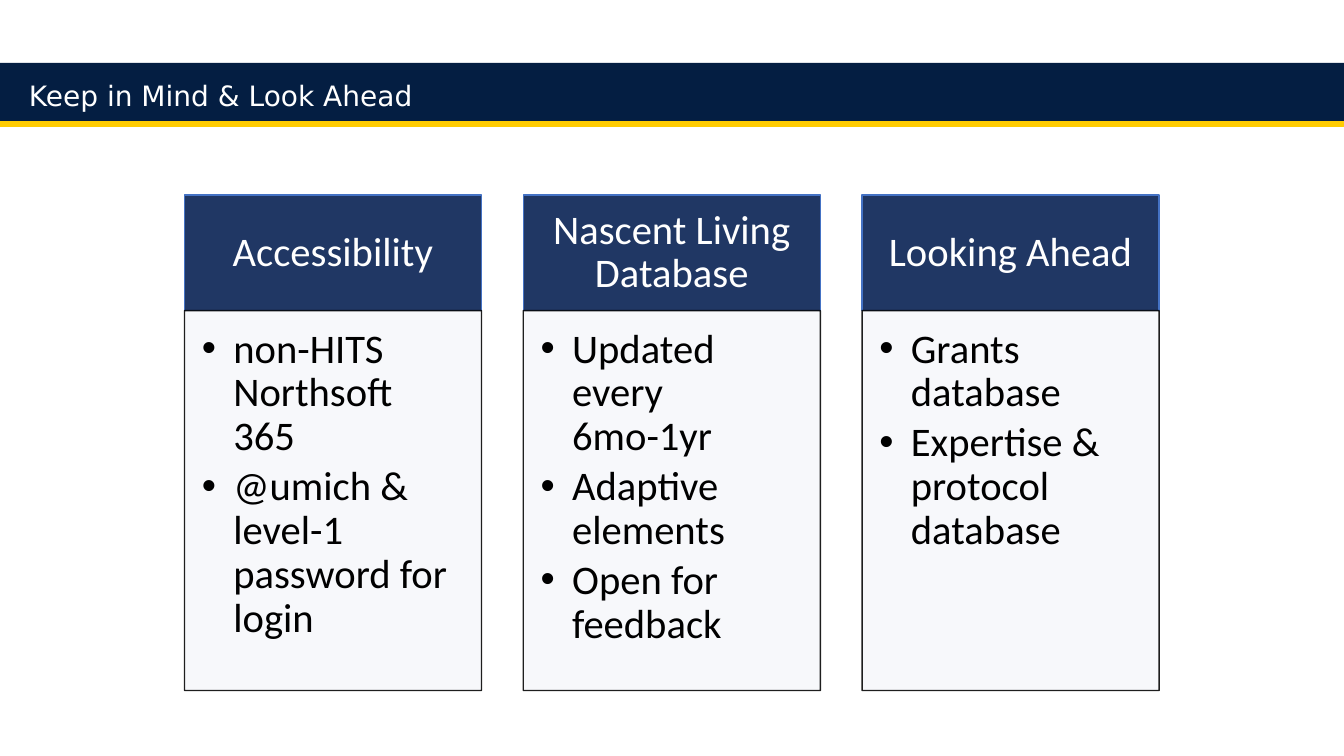
from lxml.etree import SubElement
from pptx import Presentation
from pptx.dml.color import RGBColor
from pptx.enum.shapes import MSO_SHAPE
from pptx.enum.text import MSO_ANCHOR, PP_ALIGN
from pptx.oxml.ns import qn
from pptx.util import Pt

COLORS = {
    "navy": "041E42",
    "maize": "FFCC02",
    "header": "203764",
    "header_edge": "4472C4",
    "card": "CFD5EA",
    "black": "000000",
    "white": "FFFFFF",
}

COLUMNS = [
    ("Accessibility",
     ["non-HITS Northsoft 365", "@umich & level-1 password for login"]),
    ("Nascent Living Database",
     ["Updated every 6mo-1yr", "Adaptive elements", "Open for feedback"]),
    ("Looking Ahead",
     ["Grants database", "Expertise & protocol database"]),
]

LEFT, PITCH, WIDTH = 131.8, 242, 212.2
HEADER_TOP, HEADER_HEIGHT, BODY_HEIGHT = 139.4, 82.5, 271.4
BODY_TOP = HEADER_TOP + HEADER_HEIGHT


class SlideBuilder:
    def __init__(self, page):
        self.page = page
        self.title_style = {"name": "DejaVu Sans", "size": Pt(20)}
        self.column_style = {"name": "Calibri", "size": Pt(29)}

    def paint(self, fill, color, opacity):
        """Make a fill solid, with opacity in percent."""
        fill.solid()
        fill.fore_color.rgb = RGBColor.from_string(COLORS[color])
        if opacity < 100:
            tint = fill._xPr.find(qn("a:solidFill"))[0]
            SubElement(tint, qn("a:alpha"), val=str(opacity * 1000))

    def rectangle(self, left, top, width, height, color, opacity=100,
                  edge=None, edge_width=1, edge_opacity=100):
        box = self.page.shapes.add_shape(
            MSO_SHAPE.RECTANGLE, Pt(left), Pt(top), Pt(width), Pt(height))
        box.shadow.inherit = False
        self.paint(box.fill, color, opacity)
        if edge:
            self.paint(box.line.fill, edge, edge_opacity)
            box.line.width = Pt(edge_width)
        else:
            box.line.fill.background()
        return box

    def add_text(self, box, texts, style, color, margins, anchor, align,
                 line_spacing, space_after, indent=0, bullet=False):
        """Fill a box with paragraphs; margins run left, top, right, bottom."""
        frame = box.text_frame
        frame.word_wrap = True
        frame.vertical_anchor = anchor
        for side, margin in zip(("left", "top", "right", "bottom"), margins):
            setattr(frame, f"margin_{side}", Pt(margin))
        for index, text in enumerate(texts):
            para = frame.add_paragraph() if index else frame.paragraphs[0]
            properties = para._p.get_or_add_pPr()
            properties.set("marL", str(Pt(indent)))
            if bullet:
                properties.set("indent", str(-Pt(indent)))
                SubElement(properties, qn("a:buFont"), typeface="Arial")
                SubElement(properties, qn("a:buChar"), char="•")
            layout = {"alignment": align, "line_spacing": line_spacing,
                      "space_after": Pt(space_after)}
            for name, value in layout.items():
                setattr(para, name, value)
            span = para.add_run()
            span.text = text
            for name, value in style.items():
                setattr(span.font, name, value)
            span.font.color.rgb = RGBColor.from_string(COLORS[color])

    def title(self, text):
        bar = self.rectangle(0, 45, 960, 41.6, "navy")
        self.add_text(bar, [text], self.title_style, "white",
                      (7.2, 3.6, 7.2, 3.6), MSO_ANCHOR.MIDDLE,
                      PP_ALIGN.LEFT, 1.2, 6, indent=13.5)
        self.rectangle(0, 87, 960, 3.4, "maize", edge="maize", edge_width=0.75)

    def column(self, left, heading, items):
        header = self.rectangle(left, HEADER_TOP, WIDTH, HEADER_HEIGHT,
                                "header", edge="header_edge")
        self.add_text(header, [heading], self.column_style, "white",
                      (16.5, 9.4, 16.5, 9.4), MSO_ANCHOR.MIDDLE,
                      PP_ALIGN.CENTER, 0.9, 10.15)
        body = self.rectangle(left, BODY_TOP, WIDTH, BODY_HEIGHT, "card",
                              opacity=16, edge="black", edge_opacity=88)
        self.add_text(body, items, self.column_style, "black",
                      (12.4, 12.4, 16.5, 18.5), MSO_ANCHOR.TOP,
                      PP_ALIGN.LEFT, 0.9, 4.35, indent=22.5, bullet=True)


def main():
    deck = Presentation()
    deck.slide_width, deck.slide_height = Pt(960), Pt(540)
    builder = SlideBuilder(deck.slides.add_slide(deck.slide_layouts[6]))
    builder.title("Keep in Mind & Look Ahead")
    for index, (heading, items) in enumerate(COLUMNS):
        builder.column(LEFT + index * PITCH, heading, items)
    deck.save("out.pptx")


if __name__ == "__main__":
    main()
